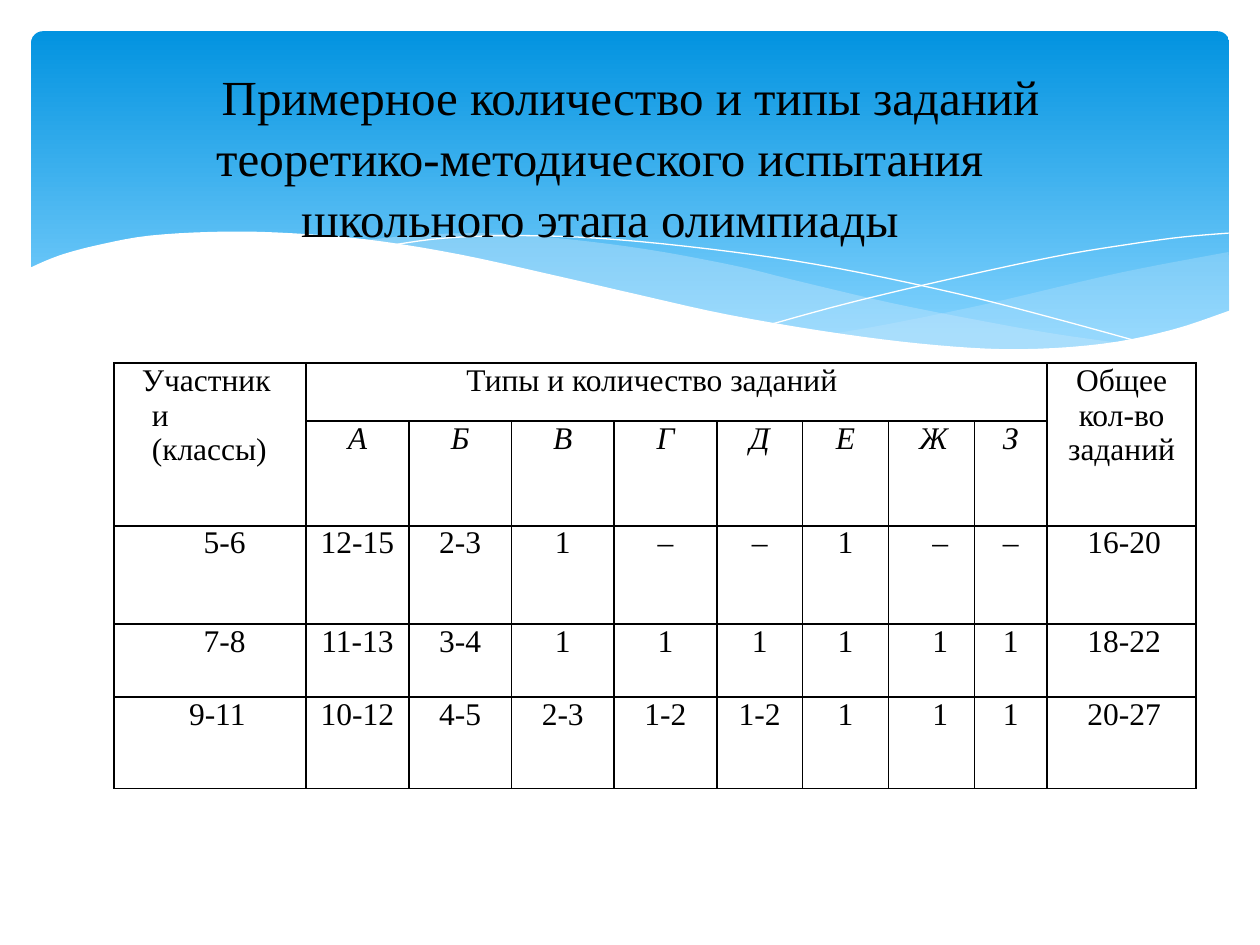
"""Build the slide with the number and types of olympiad tasks by grade."""
from lxml import etree
from pptx import Presentation
from pptx.dml.color import RGBColor
from pptx.enum.shapes import MSO_SHAPE
from pptx.enum.text import MSO_ANCHOR, PP_ALIGN
from pptx.oxml import parse_xml
from pptx.oxml.ns import nsdecls, qn
from pptx.util import Cm, Pt

ROUNDED = MSO_SHAPE.ROUNDED_RECTANGLE
MIDDLE = MSO_ANCHOR.MIDDLE
LEFT, CENTER, RIGHT = PP_ALIGN.LEFT, PP_ALIGN.CENTER, PP_ALIGN.RIGHT

THEME = {
    "font": "Times New Roman",
    "title_size": Pt(28),
    "table_size": Pt(18),
    "text": RGBColor(0x00, 0x00, 0x00),
    "paper": RGBColor(0xFF, 0xFF, 0xFF),
    "sky_top": RGBColor(0x02, 0x93, 0xE0),
    "sky_bottom": RGBColor(0x83, 0xD3, 0xFE),
    "wave": RGBColor(0xC6, 0xE7, 0xFC),
}


def smooth(knots, steps=5):
    """Return points in cm on a smooth curve through the knots."""
    ends = [knots[0], *knots, knots[-1]]
    points = []
    for a, b, c, d in zip(ends, ends[1:], ends[2:], ends[3:]):
        for step in range(steps):
            t = step / steps
            points.append(tuple(
                q + t / 2 * (r - p + t * (2 * p - 5 * q + 4 * r - s + t * (3 * (q - r) + s - p)))
                for p, q, r, s in zip(a, b, c, d)))
    return points + [knots[-1]]


def format_paragraph(para, size, align, left=0, first=0, right=0):
    """Set the font, alignment and indents of a paragraph."""
    para.alignment = align
    properties = para._p.get_or_add_pPr()
    for name, length in (("marL", left), ("marR", right), ("indent", first)):
        properties.set(name, str(Cm(length)))
    for span in para.runs:
        span.font.name = THEME["font"]
        span.font.size = size
        span.font.color.rgb = THEME["text"]


deck = Presentation()
deck.slide_width, deck.slide_height = Cm(25.4), Cm(19.05)
page = deck.slides.add_slide(deck.slide_layouts[5])

sky = page.shapes.add_shape(ROUNDED, Cm(0.63), Cm(0.63), Cm(24.15), Cm(6.86))
sky.shadow.inherit = False
sky.adjustments[0] = 0.034
sky.line.fill.background()
sky.fill.gradient()
sky.fill.gradient_angle = 270
for stop, color, position in zip(sky.fill.gradient_stops, ("sky_top", "sky_bottom"), (0, 0.9)):
    stop.color.rgb = THEME[color]
    stop.position = position

right_wave = smooth([
    (24.77, 5.08), (23.01, 5.41), (21.87, 5.66), (19.79, 6.15), (17.93, 6.53), (16.79, 6.73),
]) + smooth([
    (16.79, 6.73), (18.26, 6.91), (19.53, 7.04), (20.68, 7.06), (22.15, 6.96), (23.39, 6.73),
    (24.1, 6.53), (24.79, 6.27),
])
middle_wave = smooth([
    (7.26, 4.85), (8.33, 4.75), (9.65, 4.7), (11.23, 4.8), (13.06, 5.03), (14.83, 5.36),
    (15.98, 5.64), (17.93, 6.1), (19.69, 6.45), (21.26, 6.73), (22.68, 6.93),
]) + smooth([
    (22.68, 6.93), (21.54, 7.04), (20.5, 7.06), (19, 7.01), (17.27, 6.81), (15.27, 6.48),
    (13.46, 6.1), (11.4, 5.64), (9.73, 5.26), (8.69, 5.05), (7.26, 4.85),
])
falling_line = smooth([
    (7.85, 4.95), (8.97, 4.8), (10.57, 4.75), (12.42, 4.83), (14.78, 5.08), (16.89, 5.41),
    (19.3, 5.92), (21.11, 6.38), (23.04, 6.91),
])
rising_line = smooth([
    (15.57, 6.53), (17.07, 6.12), (19, 5.66), (21.23, 5.18), (22.73, 4.93), (23.83, 4.78),
    (24.77, 4.7),
])
paper_edge = smooth([
    (24.82, 6.25), (23.62, 6.65), (22.23, 6.93), (20.55, 7.04), (18.9, 6.96), (16.97, 6.73),
    (14.71, 6.35), (12.78, 5.92), (11.35, 5.59), (9.27, 5.13), (7.42, 4.83), (5.84, 4.7),
    (4.5, 4.67), (3.02, 4.75), (1.93, 4.95), (1.17, 5.16), (0.58, 5.41),
]) + [(0.58, 8.36), (24.82, 8.36)]

for points, color, opacity in (
    (right_wave, "wave", 29),
    (middle_wave, "wave", 40),
    (falling_line, None, 100),
    (rising_line, None, 100),
    (paper_edge, "paper", 100),
):
    outline = [(Cm(x), Cm(y)) for x, y in points]
    builder = page.shapes.build_freeform(*outline[0])
    builder.add_line_segments(outline[1:], close=color is not None)
    curve = builder.convert_to_shape()
    curve.shadow.inherit = False
    if color is None:
        curve.fill.background()
        curve.line.color.rgb = THEME["paper"]
        curve.line.width = Pt(0)
        continue
    curve.line.fill.background()
    curve.fill.solid()
    curve.fill.fore_color.rgb = THEME[color]
    if opacity < 100:
        shade = curve._element.spPr.find(qn("a:solidFill"))[0]
        etree.SubElement(shade, qn("a:alpha")).set("val", str(opacity * 1000))

title = page.shapes.title
title._element.getparent().append(title._element)
title.left, title.top, title.width, title.height = Cm(1.27), Cm(1.73), Cm(22.86), Cm(3.99)
title.text_frame.text = ("Примерное количество и типы заданий теоретико-методического "
                         "испытания школьного этапа олимпиады")
title.text_frame.vertical_anchor = MIDDLE
title.text_frame.margin_bottom = Cm(1.3)
heading = title.text_frame.paragraphs[0]
heading.line_spacing = 1.04
format_paragraph(heading, THEME["title_size"], CENTER, left=0.46, first=1.24, right=1.68)

ROWS = [
    ["Участники (классы)", "Типы и количество заданий", *[""] * 7, "Общее\nкол-во заданий"],
    ["", *"АБВГДЕЖЗ", ""],
    ["5-6", "12-15", "2-3", "1", "–", "–", "1", "–", "–", "16-20"],
    ["7-8", "11-13", "3-4", "1", "1", "1", "1", "1", "1", "18-22"],
    ["9-11", "10-12", "4-5", "2-3", "1-2", "1-2", "1", "1", "1", "20-27"],
]
COLUMN_WIDTHS = [3.87, *[2.07] * 4, *[1.73] * 3, 1.47, 3]
ROW_HEIGHTS = [1.17, 1.93, 1.98, 1.47, 1.85]
RIGHT_INDENTS = {0: 1.22, 7: 0.53, 9: 0.71}
HEADER_FORMATS = {
    0: {"align": LEFT, "left": 0.76, "first": -0.2, "right": 0.6},
    1: {"align": LEFT, "left": 3.23},
    9: {"align": CENTER},
}

table = page.shapes.add_table(
    len(ROWS), len(COLUMN_WIDTHS), Cm(2.3), Cm(7.32),
    Cm(sum(COLUMN_WIDTHS)), Cm(sum(ROW_HEIGHTS))).table
table.first_row = table.horz_banding = False
for column, width in zip(table.columns, COLUMN_WIDTHS):
    column.width = Cm(width)
for row, height in zip(table.rows, ROW_HEIGHTS):
    row.height = Cm(height)
for first, last in (((0, 0), (1, 0)), ((0, 1), (0, 8)), ((0, 9), (1, 9))):
    table.cell(*first).merge(table.cell(*last))

for row_number, texts in enumerate(ROWS):
    for column_number, text in enumerate(texts):
        cell = table.cell(row_number, column_number)
        cell.margin_left = cell.margin_right = cell.margin_top = cell.margin_bottom = 0
        cell.fill.background()
        for position, side in enumerate(("lnL", "lnR", "lnT", "lnB")):
            cell._tc.get_or_add_tcPr().insert(position, parse_xml(
                f'<a:{side} {nsdecls("a")} w="{Pt(1)}"><a:solidFill>'
                f'<a:srgbClr val="{THEME["text"]}"/></a:solidFill></a:{side}>'))
        if not text:
            continue
        cell.text_frame.text = text
        if row_number == 0:
            layout = HEADER_FORMATS[column_number]
        elif column_number in RIGHT_INDENTS:
            layout = {"align": RIGHT, "right": RIGHT_INDENTS[column_number]}
        else:
            layout = {"align": CENTER}
        for para in cell.text_frame.paragraphs:
            format_paragraph(para, THEME["table_size"], **layout)
            for span in para.runs:
                span.font.italic = row_number == 1

deck.save("out.pptx")
